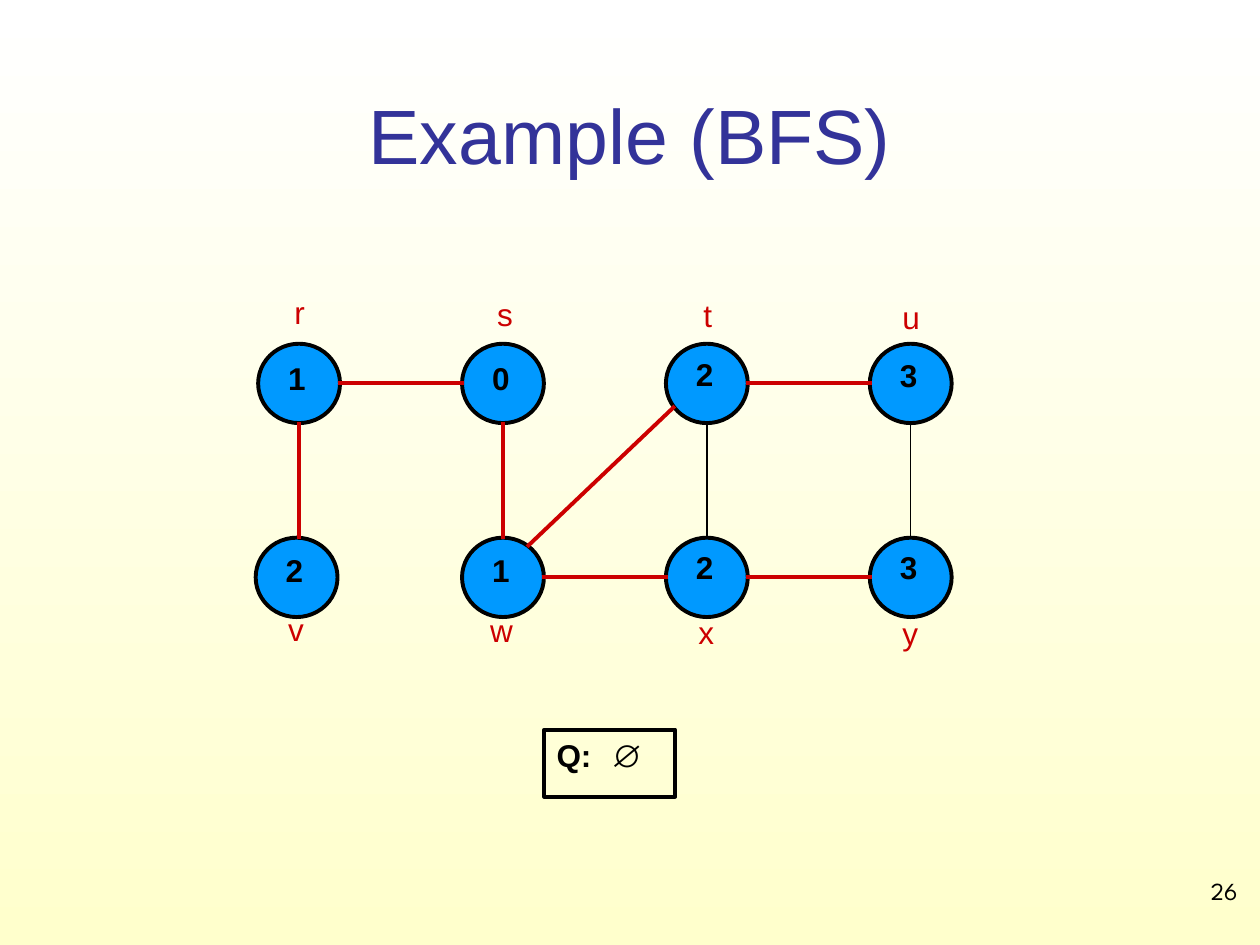
from math import hypot

from pptx import Presentation
from pptx.dml.color import RGBColor as Rgb
from pptx.enum.shapes import MSO_CONNECTOR as Link, MSO_SHAPE as Kind
from pptx.enum.text import MSO_ANCHOR as Anchor, MSO_AUTO_SIZE as Fit, PP_ALIGN as Align
from pptx.oxml import parse_xml
from pptx.oxml.ns import nsdecls
from pptx.util import Cm, Pt

TITLE = "Example (BFS)"
PAGE = "26"
QUEUE = ("Q:", "\t∅")

# name, distance, column, row, drop of the number, width of the label
NODES = [
    ("r", "1", 0, 0, 0.18, 0.79), ("s", "0", 1, 0, 0.18, 0.84),
    ("t", "2", 2, 0, 0.1, 0.74), ("u", "3", 3, 0, 0.13, 0.94),
    ("v", "2", 0, 1, 0.15, 0.94), ("w", "1", 1, 1, 0.15, 1.12),
    ("x", "2", 2, 1, 0.08, 0.94), ("y", "3", 3, 1, 0.08, 0.94),
]
# ends, style, shift of the whole line
EDGES = [
    ("rs", "tree", 0), ("wx", "tree", 0), ("xy", "tree", 0), ("tu", "tree", 0),
    ("rv", "tree", 0), ("sw", "tree", 0), ("tx", "thin", 0), ("uy", "thin", 0),
    ("wt", "tree", -0.08),
]

BLACK, RED = Rgb(0, 0, 0), Rgb(0xCC, 0, 0)
THEME = {
    "sky": (Rgb(255, 255, 255), Rgb(255, 255, 0xCC)),
    "node": Rgb(0, 0x99, 0xFF),
    "title": {"name": "Arial", "size": Pt(44), "color": Rgb(0x33, 0x33, 0x99)},
    "count": {"name": "Arial", "size": Pt(18), "color": BLACK, "bold": True},
    "empty": {"name": "Arial", "size": Pt(18), "color": BLACK, "bold": False},
    "label": {"name": "Arial", "size": Pt(18), "color": RED},
    "page": {"name": "League Spartan", "size": Pt(14), "color": BLACK},
    "rim": (BLACK, 2.25),
    "tree": (RED, 2.25),
    "thin": (BLACK, 0.75),
}

# centre of the first node, steps of the grid, node size, reach of an edge (cm)
LEFT, TOP, STEP, RISE = 6.03, 7.73, 4.11, 3.91
WIDE, HIGH, REACH = 1.65, 1.6, 0.78
SMALL, TALL = 0.94, 1.27
LABELS = (5.79, 12.17)
DRIFT = 0.03
NUDGE = {"v": -0.05}


def style(font, key):
    for name, value in THEME[key].items():
        if name == "color":
            font.color.rgb = value
        else:
            setattr(font, name, value)


def stroke(line, key):
    color, width = THEME[key]
    line.color.rgb = color
    line.width = Pt(width)


def write(frame, runs, align=Align.LEFT):
    """Fill the first paragraph with (text, style) runs."""
    para = frame.paragraphs[0]
    para.alignment = align
    for text, key in runs:
        run = para.add_run()
        run.text = text
        style(run.font, key)
    return para


def note(slide, mid, top, width, text, key):
    """Add a small text box centred on mid."""
    box = slide.shapes.add_textbox(Cm(mid - width / 2), Cm(top), Cm(width), Cm(TALL))
    box.text_frame.word_wrap = False
    box.text_frame.auto_size = Fit.SHAPE_TO_FIT_TEXT
    write(box.text_frame, [(text, key)])


def outline(slide, kind, *area):
    shape = slide.shapes.add_shape(kind, *map(Cm, area))
    shape.shadow.inherit = False
    stroke(shape.line, "rim")
    return shape


def join(slide, start, end, key, shift):
    """Draw an edge from rim to rim between two node centres."""
    (x1, y1), (x2, y2) = start, end
    size = hypot(x2 - x1, y2 - y1)
    dx, dy = (x2 - x1) / size * REACH, (y2 - y1) / size * REACH
    ends = (x1 + dx, y1 + dy, x2 - dx, y2 - dy)
    edge = slide.shapes.add_connector(Link.STRAIGHT, *(Cm(e + shift) for e in ends))
    stroke(edge.line, key)
    edge._element.spPr.append(parse_xml(f"<a:effectLst {nsdecls('a')}/>"))


def graph(slide):
    spots = {}
    for name, count, col, row, drop, width in NODES:
        x, y = LEFT + col * STEP, TOP + row * RISE
        spots[name] = x, y
        mid, top = x + NUDGE.get(name, 0), y - HIGH / 2
        disc = outline(slide, Kind.OVAL, mid - WIDE / 2, top, WIDE, HIGH)
        disc.fill.solid()
        disc.fill.fore_color.rgb = THEME["node"]
        note(slide, mid, top + drop, SMALL, count, "count")
        note(slide, mid + 0.05, LABELS[row] + col * DRIFT, width, name, "label")
    for (a, b), key, shift in EDGES:
        join(slide, spots[a], spots[b], key, shift)


def queue(slide):
    box = outline(slide, Kind.RECTANGLE, 10.97, 14.71, 2.64, 1.35)
    box.fill.background()
    frame = box.text_frame
    frame.vertical_anchor = Anchor.TOP
    para = write(frame, zip(QUEUE, ("count", "empty")))
    para._p.get_or_add_pPr().append(parse_xml(
        f'<a:tabLst {nsdecls("a")}><a:tab pos="{Cm(1.1)}" algn="l"/></a:tabLst>'))


def main():
    deck = Presentation()
    deck.slide_width, deck.slide_height = Cm(25.4), Cm(19.05)
    slide = deck.slides.add_slide(deck.slide_layouts[5])

    fill = slide.background.fill
    fill.gradient()
    fill.gradient_angle = 270
    for stop, color in zip(fill.gradient_stops, THEME["sky"]):
        stop.color.rgb = color

    title = slide.shapes.title
    area = {"left": 1.27, "top": 0.76, "width": 22.86, "height": 3.89}
    for name, value in area.items():
        setattr(title, name, Cm(value))
    title.text_frame.vertical_anchor = Anchor.MIDDLE
    write(title.text_frame, [(TITLE, "title")], Align.CENTER)

    graph(slide)
    queue(slide)

    page = slide.shapes.add_textbox(Cm(23.5), Cm(17.53), Cm(1.7), Cm(1.32))
    page.text_frame.word_wrap = True
    write(page.text_frame, [(PAGE, "page")], Align.RIGHT)
    deck.save("out.pptx")


if __name__ == "__main__":
    main()
